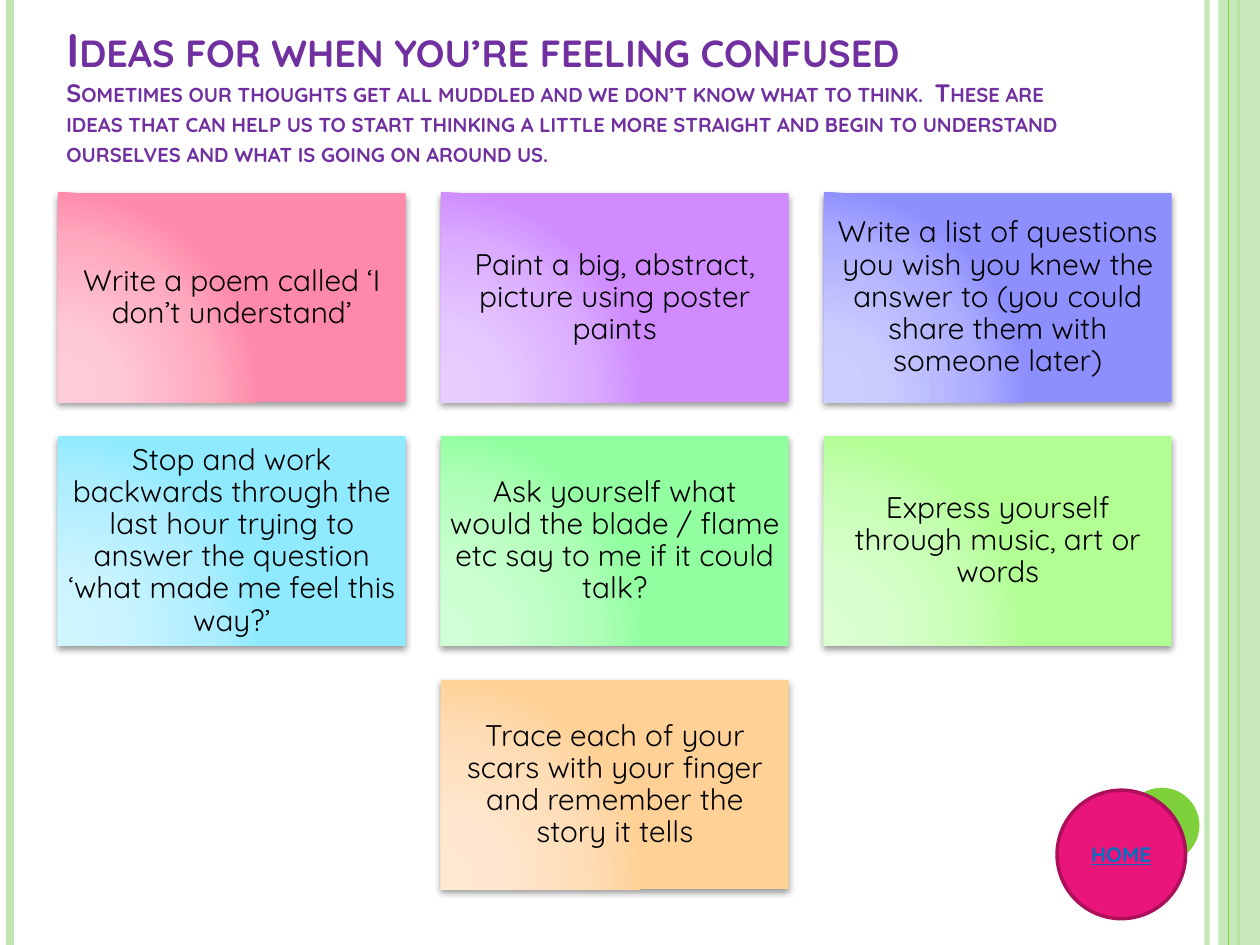
import pptx
import pptx.util
import pptx.dml.color
import pptx.enum.shapes
import pptx.enum.text
import pptx.oxml
import pptx.oxml.ns
from lxml import etree

Cm, Pt = pptx.util.Cm, pptx.util.Pt
SHAPES = pptx.enum.shapes.MSO_SHAPE
ANCHOR = pptx.enum.text.MSO_ANCHOR
ALIGN = pptx.enum.text.PP_ALIGN
qn = pptx.oxml.ns.qn
NS = pptx.oxml.ns.nsdecls("a")

FONT = "Quicksand"
WIDTH, HEIGHT = 25.4, 19.05

# Card grid, in centimetres
LEFT, TOP, CARD_W, CARD_H = 1.17, 3.89, 7.01, 4.22
STEP_X, STEP_Y = 7.72, 4.91
COLUMNS = 3

STOPS = (0, 30, 75, 100)
CARDS = [
    ("Write a poem called ‘I don’t understand’",
     ("FFCDD9", "FFC8D5", "FFA9BF", "FF89AA")),
    ("Paint a big, abstract, picture using poster paints",
     ("E8CEFF", "E6C9FF", "DAABFF", "CF8BFF")),
    ("Write a list of questions you wish you knew the answer to "
     "(you could share them with someone later)",
     ("CFCFFF", "CACBFF", "ADAEFF", "8E8FFF")),
    ("Stop and work backwards through the last hour trying to answer "
     "the question ‘what made me feel this way?’",
     ("D0F5FF", "CBF4FF", "AEEEFF", "90EAFF")),
    ("Ask yourself what would the blade / flame etc say to me if it could talk?",
     ("D1FFD6", "CCFFD2", "B0FFB9", "92FFA0")),
    ("Express yourself through music, art or words",
     ("DCFFD2", "D9FFCE", "C5FFB2", "B2FF94")),
    ("Trace each of your scars with your finger and remember the story it tells",
     ("FFE9D3", "FFE7CF", "FFDCB4", "FFD196")),
]

TITLE = "Ideas for when you’re feeling confused"
INTRO = ("Sometimes our thoughts get all muddled and we don’t know what to think.  "
         "These are ideas that can help us to start thinking a little more straight "
         "and begin to understand ourselves and what is going on around us.")


def rgb(color):
    return pptx.dml.color.RGBColor.from_string(color)


def set_alpha(fill, percent):
    color = fill._xPr.find(qn("a:solidFill"))[0]
    etree.SubElement(color, qn("a:alpha")).set("val", str(percent * 1000))


def style_run(r, size, color, bold=False):
    r.font.name = FONT
    r.font.size = Pt(size)
    r.font.bold = bold
    r.font.color.rgb = rgb(color)


def add_shape(s, kind, x, y, w, h, fill):
    sp = s.shapes.add_shape(kind, Cm(x), Cm(y), Cm(w), Cm(h))
    sp.shadow.inherit = False
    sp.fill.solid()
    sp.fill.fore_color.rgb = rgb(fill)
    sp.line.fill.background()
    return sp


def add_stripe(s, x, color, width, alpha=None):
    line = s.shapes.add_connector(pptx.enum.shapes.MSO_CONNECTOR.STRAIGHT,
                                  Cm(x), 0, Cm(x), Cm(HEIGHT))
    line.line.color.rgb = rgb(color)
    line.line.width = Pt(width)
    if alpha:
        set_alpha(line.line.fill, alpha)
    etree.SubElement(line._element.spPr, qn("a:effectLst"))


def add_centred_text(sp, text, size, color, bold=False):
    tf = sp.text_frame
    tf.word_wrap = True
    tf.vertical_anchor = ANCHOR.MIDDLE
    tf.text = text
    p = tf.paragraphs[0]
    p.alignment = ALIGN.CENTER
    style_run(p.runs[0], size, color, bold)
    return tf


def set_glow_gradient(sp, colors):
    stops = "".join(f'<a:gs pos="{pos * 1000}"><a:srgbClr val="{color}"/></a:gs>'
                    for pos, color in zip(STOPS, colors))
    gradient = pptx.oxml.parse_xml(
        f'<a:gradFill {NS} rotWithShape="1"><a:gsLst>{stops}</a:gsLst>'
        '<a:path path="circle"><a:fillToRect l="5000" t="100000" r="120000" b="10000"/>'
        '</a:path></a:gradFill>')
    sp_pr = sp._element.spPr
    sp_pr.replace(sp_pr.find(qn("a:solidFill")), gradient)


def set_drop_shadow(sp):
    effects = sp._element.spPr.find(qn("a:effectLst"))
    effects.append(pptx.oxml.parse_xml(
        f'<a:outerShdw {NS} blurRad="{Pt(4)}" dist="{Pt(2)}" dir="5400000" '
        'rotWithShape="0"><a:srgbClr val="000000"><a:alpha val="40000"/></a:srgbClr>'
        '</a:outerShdw>'))


def add_card(s, index, text, colors):
    row, col = divmod(index, COLUMNS)
    if row == 2:
        col = 1  # the last card sits in the middle column
    sp = add_shape(s, SHAPES.RECTANGLE, LEFT + col * STEP_X, TOP + row * STEP_Y,
                   CARD_W, CARD_H, colors[-1])
    set_glow_gradient(sp, colors)
    set_drop_shadow(sp)
    tf = add_centred_text(sp, text, 17, "000000")
    tf.margin_left = tf.margin_right = tf.margin_top = tf.margin_bottom = Cm(0.18)
    tf.paragraphs[0].line_spacing = 0.9


def add_title(s):
    tf = s.shapes.add_textbox(Cm(1.09), Cm(0.33), Cm(20.75), Cm(3.18)).text_frame
    tf.word_wrap = True
    tf.vertical_anchor = ANCHOR.BOTTOM
    p = tf.paragraphs[0]
    p.text = f"{TITLE}\v{INTRO}"
    for r, size in zip(p.runs, (27, 14.4)):
        style_run(r, size, "7030A0", bold=True)
        r.font._element.set("cap", "small")


def add_frame(s):
    add_stripe(s, 24.33, "C0E5AF", 3, alpha=93)
    add_stripe(s, 0.2, "C0E5AF", 4.5)
    add_stripe(s, 24.97, "7FD13B", 1.5)
    band = add_shape(s, SHAPES.RECTANGLE, 24.56, 0, WIDTH - 24.56, HEIGHT, "C0E5AF")
    set_alpha(band.fill, 87)
    add_stripe(s, 24.77, "7FD13B", 0.75)
    add_shape(s, SHAPES.OVAL, 22.66, 15.88, 1.52, 1.52, "7FD13B")


def add_home_button(s):
    sp = add_shape(s, SHAPES.OVAL, 21.31, 15.93, 2.59, 2.59, "EA157A")
    sp.line.color.rgb = rgb("AD105A")
    sp.line.width = Pt(2)
    tf = add_centred_text(sp, "HOME", 12, "0070C0", bold=True)
    tf.paragraphs[0].runs[0].font.underline = True


def main():
    prs = pptx.Presentation()
    prs.slide_width, prs.slide_height = Cm(WIDTH), Cm(HEIGHT)
    s = prs.slides.add_slide(prs.slide_layouts[6])

    # Side stripes and heading
    add_frame(s)
    add_title(s)

    # Idea cards
    for index, (text, colors) in enumerate(CARDS):
        add_card(s, index, text, colors)

    add_home_button(s)
    prs.save("out.pptx")


if __name__ == "__main__":
    main()
